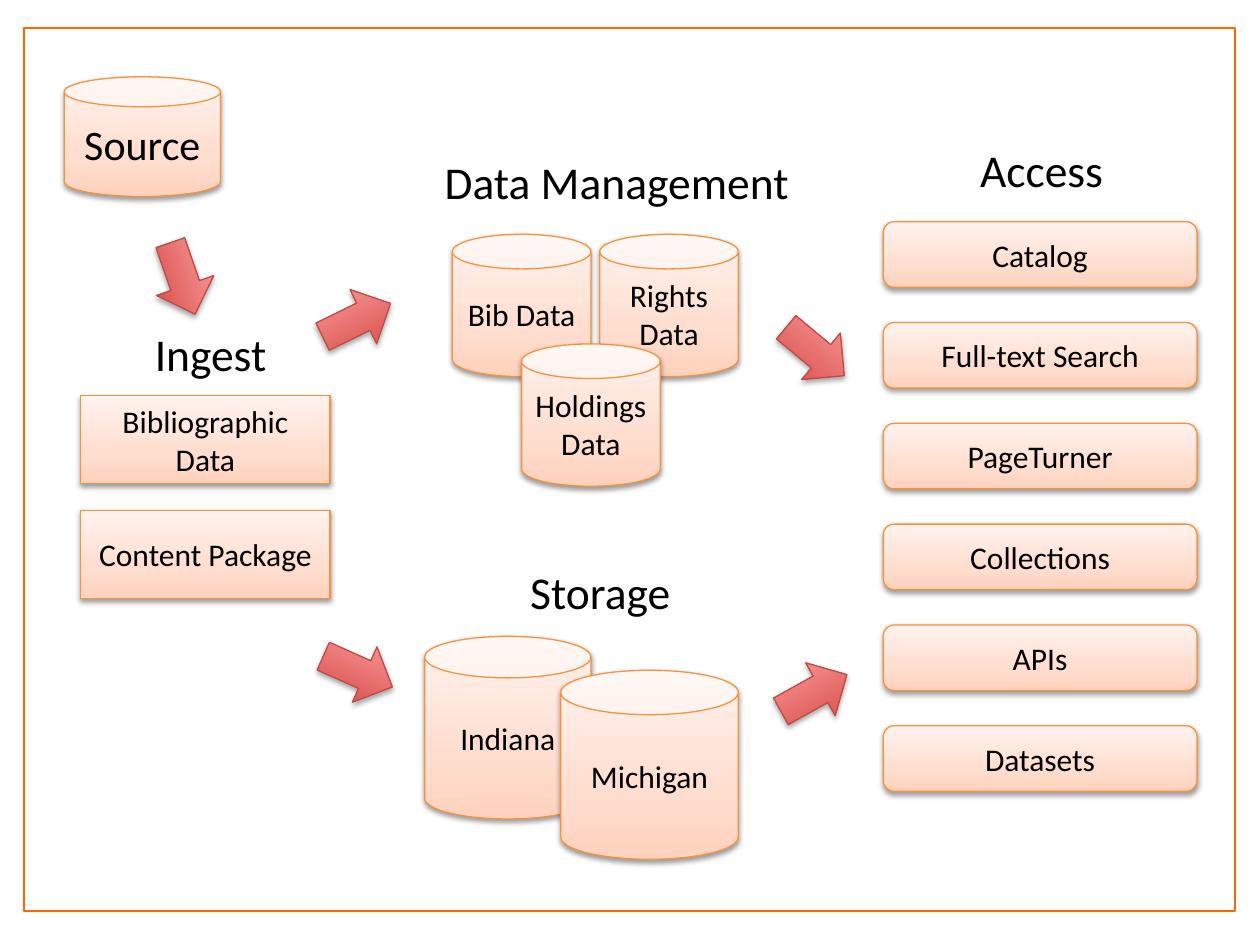
from dataclasses import dataclass

from lxml.etree import SubElement as Sub
from pptx import Presentation
from pptx.dml.color import RGBColor as RGB
from pptx.enum.shapes import MSO_SHAPE as Kind
from pptx.enum.text import MSO_ANCHOR as Anchor, MSO_AUTO_SIZE as Fit, PP_ALIGN as Align
from pptx.oxml.ns import qn
from pptx.util import Inches, Pt


@dataclass(frozen=True)
class Look:
    """Gradient stops, line colour, shadow strength (%) and drop (points)."""
    stops: tuple
    line: str
    dark: int
    drop: float


@dataclass(frozen=True)
class Theme:
    font: str = "Calibri"
    ink: str = "000000"
    paper: str = "FFFFFF"
    frame: str = "FF6600"
    head: int = 26
    large: int = 24
    body: int = 18
    peach: Look = Look(((0, "FFD2BD"), (35, "FFDED0"), (100, "FFF2ED")), "F69240", 38, 1.6)
    red: Look = Look(((0, "D1403C"), (100, "FFA6A5")), "BF4C48", 35, 1.8)


class Deck:
    def __init__(self, theme):
        self.theme = theme
        self.prs = Presentation()
        self.prs.slide_width, self.prs.slide_height = Inches(10), Inches(7.5)
        self.slide = self.prs.slides.add_slide(self.prs.slide_layouts[6])

    def shape(self, kind, box, line, width=0.75):
        item = self.slide.shapes.add_shape(kind, *map(Inches, box))
        item.shadow.inherit = False
        item.line.color.rgb = RGB.from_string(line)
        item.line.width = Pt(width)
        return item

    def frame(self, box):
        item = self.shape(Kind.RECTANGLE, box, self.theme.frame, 1)
        item.fill.solid()
        item.fill.fore_color.rgb = RGB.from_string(self.theme.paper)

    def glossy(self, kind, box, look):
        """Add a shape with an upward gradient and a soft shadow below."""
        item = self.shape(kind, box, look.line)
        item.fill.gradient()
        item.fill.gradient_angle = 90
        props = item._element.spPr
        stops = props.find(qn("a:gradFill")).find(qn("a:gsLst"))
        for old in list(stops):
            stops.remove(old)
        for pos, tone in look.stops:
            stop = Sub(stops, qn("a:gs"), pos=str(pos * 1000))
            Sub(stop, qn("a:srgbClr"), val=tone)
        cast = Sub(props.find(qn("a:effectLst")), qn("a:outerShdw"),
                   blurRad=str(Pt(3.1)), dist=str(Pt(look.drop)),
                   dir="5400000", rotWithShape="0")
        tone = Sub(cast, qn("a:srgbClr"), val="000000")
        Sub(tone, qn("a:alpha"), val=str(look.dark * 1000))
        return item

    def label(self, item, text, size, align):
        para = item.text_frame.paragraphs[0]
        para.alignment = align
        run = para.add_run()
        run.text = text
        run.font.name = self.theme.font
        run.font.size = Pt(size)
        run.font.color.rgb = RGB.from_string(self.theme.ink)

    def node(self, kind, text, box, size=None):
        item = self.glossy(kind, box, self.theme.peach)
        item.text_frame.word_wrap = True
        item.text_frame.vertical_anchor = Anchor.MIDDLE
        self.label(item, text, size or self.theme.body, Align.CENTER)

    def arrow(self, left, top, turn):
        item = self.glossy(Kind.RIGHT_ARROW, (left, top, 0.6, 0.48), self.theme.red)
        item.rotation = turn

    def head(self, text, left, top, width):
        item = self.slide.shapes.add_textbox(*map(Inches, (left, top, width, 0.54)))
        item.text_frame.word_wrap = True
        item.text_frame.auto_size = Fit.SHAPE_TO_FIT_TEXT
        self.label(item, text, self.theme.head, Align.LEFT)


def main():
    theme = Theme()
    deck = Deck(theme)
    deck.frame((0.19, 0.22, 9.61, 7.01))

    deck.node(Kind.CAN, "Source", (0.51, 0.61, 1.24, 0.95), theme.large)
    for text, top in (("Bibliographic Data", 3.14), ("Content Package", 4.05)):
        deck.node(Kind.RECTANGLE, text, (0.64, top, 1.98, 0.7))

    deck.node(Kind.CAN, "Indiana", (3.37, 5.05, 1.32, 1.45))
    deck.node(Kind.CAN, "Michigan", (4.45, 5.32, 1.41, 1.5))
    for text, left, top in (("Bib Data", 3.59, 1.86), ("Rights Data", 4.76, 1.86),
                            ("Holdings Data", 4.14, 2.73)):
        deck.node(Kind.CAN, text, (left, top, 1.1, 1.13))

    for text, left, top, width in (("Data Management", 3.43, 1.17, 3.58),
                                   ("Storage", 4.11, 4.43, 1.77),
                                   ("Access", 7.68, 1.08, 1.99),
                                   ("Ingest", 1.13, 2.54, 1.61)):
        deck.head(text, left, top, width)

    access = ("Catalog", "Full-text Search", "PageTurner",
              "Collections", "APIs", "Datasets")
    for row, text in enumerate(access):
        deck.node(Kind.ROUNDED_RECTANGLE, text, (7.01, 1.76 + 0.8 * row, 2.49, 0.52))

    for left, top, turn in ((1.15, 1.97, 70.9), (2.53, 2.3, 333.9), (2.54, 5.09, 24),
                            (6.17, 2.55, 39.8), (6.16, 5.26, 330.9)):
        deck.arrow(left, top, turn)

    deck.prs.save("out.pptx")


if __name__ == "__main__":
    main()
